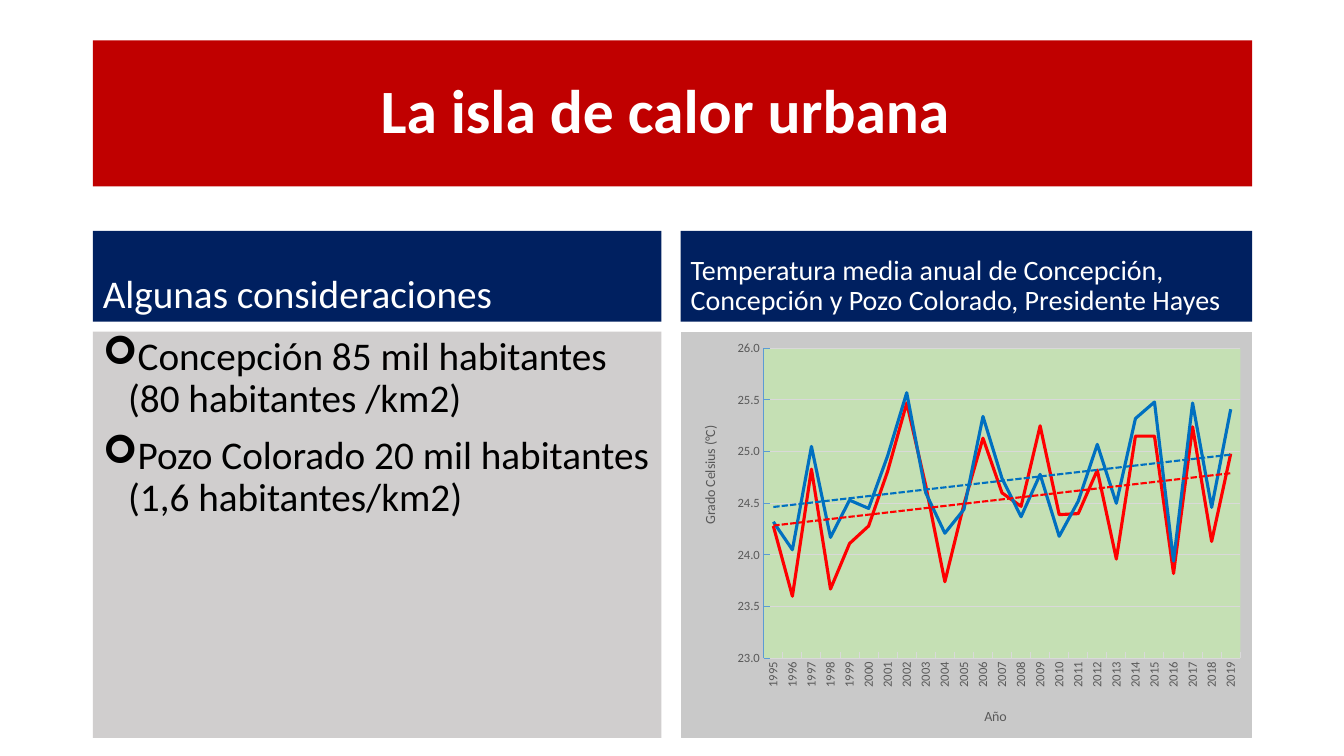
"""Build a slide comparing population and yearly mean temperature of two Paraguayan towns."""
from lxml.etree import SubElement
from pptx import Presentation
from pptx.chart.data import CategoryChartData
from pptx.dml.color import RGBColor
from pptx.enum.chart import XL_CHART_TYPE, XL_MARKER_STYLE, XL_TICK_MARK
from pptx.enum.text import MSO_ANCHOR, MSO_AUTO_SIZE, PP_ALIGN
from pptx.oxml import parse_xml
from pptx.oxml.ns import nsdecls, qn
from pptx.util import Inches, Pt

FONT = "Calibri"
WIDTH, HEIGHT = 13.33, 7.5
LEFT, RIGHT = 0.92, 12.42
LEFT_WIDTH, RIGHT_WIDTH = 5.64, 5.67
RIGHT_COLUMN = RIGHT - RIGHT_WIDTH
TITLE_ROW, HEADING_ROW, CONTENT_ROW = (0.4, 1.45), (2.29, 0.9), (3.29, 4.03)

TITLE = "La isla de calor urbana "
HEADING = "Algunas consideraciones"
CHART_HEADING = "Temperatura media anual de Concepción, Concepción y Pozo Colorado, Presidente Hayes"
FACTS = [
    "Concepción 85 mil habitantes (80 habitantes /km2)",
    "Pozo Colorado 20 mil habitantes (1,6 habitantes/km2)",
]
PANELS = [
    (0, [TITLE], LEFT, RIGHT - LEFT, TITLE_ROW, "C00000", "FFFFFF", 44, MSO_ANCHOR.MIDDLE),
    (1, [HEADING], LEFT, LEFT_WIDTH, HEADING_ROW, "002060", "FFFFFF", 28, MSO_ANCHOR.BOTTOM),
    (2, FACTS, LEFT, LEFT_WIDTH, CONTENT_ROW, "D0CECE", "000000", 28, MSO_ANCHOR.TOP),
    (3, [CHART_HEADING], RIGHT_COLUMN, RIGHT_WIDTH, HEADING_ROW, "002060", "FFFFFF", 20,
     MSO_ANCHOR.BOTTOM),
]
YEARS = [str(year) for year in range(1995, 2020)]
TEMPERATURES = [
    ("Series 1", "FF0000", [
        24.28, 23.6, 24.83, 23.67, 24.11, 24.28, 24.81, 25.47, 24.67, 23.74, 24.49, 25.13, 24.6,
        24.47, 25.25, 24.39, 24.4, 24.82, 23.96, 25.15, 25.15, 23.82, 25.24, 24.13, 24.98]),
    ("Series 2", "0070C0", [
        24.32, 24.05, 25.05, 24.17, 24.53, 24.45, 24.96, 25.57, 24.6, 24.21, 24.44, 25.34, 24.74,
        24.37, 24.78, 24.18, 24.52, 25.07, 24.5, 25.32, 25.48, 23.94, 25.47, 24.46, 25.41]),
]
PLOT_SHARES = {"x": 0.145, "y": 0.04, "w": 0.835, "h": 0.765}
YEAR_TITLE = ("Año", {"x": 0.527, "y": 0.92}, "0")
DEGREE_TITLE = ("Grado Celsius (°C)", {"x": 0.03, "y": 0.225}, "-5400000")


def color(hex_text):
    return RGBColor.from_string(hex_text)


def set_font(font, size, hex_text, bold=False):
    font.name, font.size, font.bold = FONT, Pt(size), bold
    font.color.rgb = color(hex_text)


def set_line(line, hex_text, width):
    line.color.rgb = color(hex_text)
    line.width = Pt(width)


def area_format(fill, border=None):
    outline = (f'<a:ln w="9525"><a:solidFill><a:srgbClr val="{border}"/></a:solidFill></a:ln>'
               if border else "")
    return parse_xml(f'<c:spPr {nsdecls("c", "a")}><a:solidFill><a:srgbClr val="{fill}"/>'
                     f'</a:solidFill>{outline}</c:spPr>')


def place(element, shares, position):
    """Set a manual layout, in shares of the chart, as the child at a position."""
    for old in element.findall(qn("c:layout")):
        element.remove(old)
    layout = parse_xml(f'<c:layout {nsdecls("c")}><c:manualLayout/></c:layout>')
    manual = layout[0]
    if "w" in shares:
        SubElement(manual, qn("c:layoutTarget"), val="inner")
    for side in "xy":
        SubElement(manual, qn(f"c:{side}Mode"), val="edge")
    for key, share in shares.items():
        SubElement(manual, qn(f"c:{key}"), val=str(share))
    element.insert(position, layout)


def fill_panel(panel, lines, left, width, row, fill, ink, size, anchor):
    top, height = row
    panel.left, panel.top, panel.width, panel.height = map(Inches, (left, top, width, height))
    panel.fill.solid()
    panel.fill.fore_color.rgb = color(fill)
    frame = panel.text_frame
    frame.text = "\n".join(lines)
    frame.auto_size = MSO_AUTO_SIZE.NONE
    frame.word_wrap = True
    frame.vertical_anchor = anchor
    is_title = lines == [TITLE]
    for paragraph in frame.paragraphs:
        paragraph.alignment = PP_ALIGN.CENTER if is_title else PP_ALIGN.LEFT
        paragraph.line_spacing = 0.9
        paragraph.space_before = Pt(0 if is_title else 10)
        set_font(paragraph.runs[0].font, size, ink, is_title)
        if lines is FACTS:
            properties = paragraph._p.get_or_add_pPr()
            properties.set("marL", str(Inches(0.25)))
            properties.set("indent", str(-Inches(0.25)))
            SubElement(properties, qn("a:buFont"), typeface="Wingdings")
            SubElement(properties, qn("a:buChar"), char="➢")


def style_axis(axis, line_color, title, shares, rotation):
    axis.major_tick_mark = XL_TICK_MARK.INSIDE
    axis.minor_tick_mark = XL_TICK_MARK.NONE
    set_font(axis.tick_labels.font, 9, "595959")
    set_line(axis.format.line, line_color, 0.75)
    frame = axis.axis_title.text_frame
    frame.text = title
    set_font(frame.paragraphs[0].runs[0].font, 10, "595959")
    frame._txBody.find(qn("a:bodyPr")).set("rot", rotation)
    place(axis.axis_title._element, shares, 1)


def add_temperatures(slide):
    data = CategoryChartData(number_format="0.0")
    data.categories = YEARS
    for name, _, values in TEMPERATURES:
        data.add_series(name, values)
    box = map(Inches, (RIGHT_COLUMN, CONTENT_ROW[0], RIGHT_WIDTH, CONTENT_ROW[1]))
    chart = slide.shapes.add_chart(XL_CHART_TYPE.LINE, *box, data).chart
    chart.has_legend = chart.has_title = False
    set_font(chart.font, 10, "000000")
    chart.plots[0].vary_by_categories = False

    years, degrees = chart.category_axis, chart.value_axis
    style_axis(years, "D9D9D9", *YEAR_TITLE)
    style_axis(degrees, "5B9BD5", *DEGREE_TITLE)
    years._element.find(qn("c:txPr")).find(qn("a:bodyPr")).set("rot", "-5400000")
    degrees.minimum_scale, degrees.maximum_scale, degrees.major_unit = 23, 26, 0.5
    degrees.tick_labels.number_format = "0.0"
    degrees.tick_labels.number_format_is_linked = False
    set_line(degrees.major_gridlines.format.line, "D9D9D9", 0.75)

    for series, (_, hex_text, _) in zip(chart.plots[0].series, TEMPERATURES):
        series.smooth = False
        series.marker.style = XL_MARKER_STYLE.NONE
        set_line(series.format.line, hex_text, 2.25)
        series._element.find(qn("c:cat")).addprevious(parse_xml(
            f'<c:trendline {nsdecls("c", "a")}><c:spPr><a:ln w="{Pt(1.5)}"><a:solidFill>'
            f'<a:srgbClr val="{hex_text}"/></a:solidFill><a:prstDash val="sysDash"/></a:ln>'
            '</c:spPr><c:trendlineType val="linear"/><c:dispRSqr val="0"/>'
            '<c:dispEq val="0"/></c:trendline>'))

    chart_part = chart._chartSpace.find(qn("c:chart"))
    chart_part.addnext(area_format("C9C9C9", "C9C9C9"))
    plot_area = chart_part.find(qn("c:plotArea"))
    place(plot_area, PLOT_SHARES, 0)
    plot_area.append(area_format("C5E0B4"))


def main():
    deck = Presentation()
    deck.slide_width, deck.slide_height = Inches(WIDTH), Inches(HEIGHT)
    slide = deck.slides.add_slide(deck.slide_layouts.get_by_name("Comparison"))
    holders = {holder.placeholder_format.idx: holder for holder in slide.placeholders}
    for index, *panel in PANELS:
        fill_panel(holders[index], *panel)
    unused = holders[4]._element
    unused.getparent().remove(unused)
    add_temperatures(slide)
    deck.save("out.pptx")


if __name__ == "__main__":
    main()
